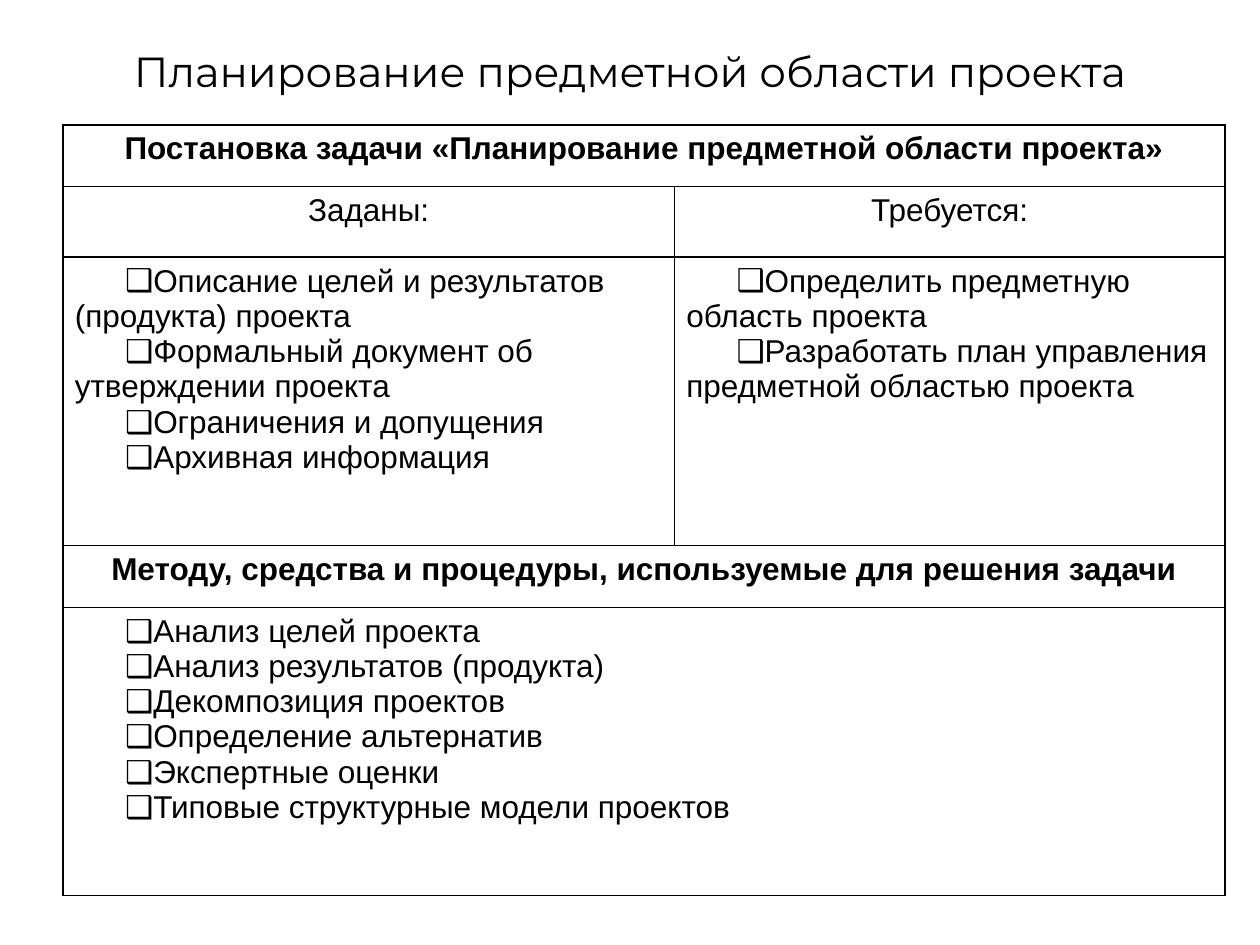
from dataclasses import dataclass

import pptx
import pptx.dml.color
import pptx.enum.text
import pptx.oxml.ns
import pptx.util
from lxml import etree

Pt = pptx.util.Pt
ALIGN = pptx.enum.text.PP_ALIGN
ANCHOR = pptx.enum.text.MSO_ANCHOR
BLACK = "000000"
COLUMNS = (349.4, 314.6)
ROWS = (35.2, 40.3, 164.9, 35.2, 164.6)


@dataclass
class CellText:
    row: int
    col: int
    lines: tuple[str, ...]
    heading: bool = False
    bullets: bool = False
    wide: bool = False


CELLS = (
    CellText(0, 0, ("Постановка задачи «Планирование предметной области проекта»",),
             heading=True, wide=True),
    CellText(1, 0, ("Заданы:",)),
    CellText(1, 1, ("Требуется:",)),
    CellText(2, 0, ("Описание целей и результатов (продукта) проекта",
                    "Формальный документ об утверждении проекта",
                    "Ограничения и допущения",
                    "Архивная информация"), bullets=True),
    CellText(2, 1, ("Определить предметную область проекта",
                    "Разработать план управления предметной областью проекта"),
             bullets=True),
    CellText(3, 0, ("Методу, средства и процедуры, используемые для решения задачи",),
             heading=True, wide=True),
    CellText(4, 0, ("Анализ целей проекта",
                    "Анализ результатов (продукта)",
                    "Декомпозиция проектов",
                    "Определение альтернатив",
                    "Экспертные оценки",
                    "Типовые структурные модели проектов"), bullets=True, wide=True),
)


def rgb(color: str) -> pptx.dml.color.RGBColor:
    return pptx.dml.color.RGBColor.from_string(color)


def add_xml(parent, tag: str, **attrs: str):
    return etree.SubElement(parent, pptx.oxml.ns.qn(tag), attrs)


def set_font(p, name: str, size: float, bold: bool = False) -> None:
    p.font.name, p.font.size, p.font.bold = name, Pt(size), bold
    p.font.color.rgb = rgb(BLACK)


def set_bullet(p) -> None:
    props = p._p.get_or_add_pPr()
    props.set("marL", "0")
    props.set("indent", str(Pt(28.8)))
    # Bullet font and character come before the default run properties
    props.insert(0, etree.Element(pptx.oxml.ns.qn("a:buFont"), typeface="Arial"))
    props.insert(1, etree.Element(pptx.oxml.ns.qn("a:buChar"), char="❑"))


def set_borders(cell, color: str, width: float) -> None:
    props = cell._tc.get_or_add_tcPr()
    for side in ("a:lnL", "a:lnR", "a:lnT", "a:lnB"):
        line = add_xml(props, side, w=str(Pt(width)))
        add_xml(add_xml(line, "a:solidFill"), "a:srgbClr", val=color)


def fill_cell(table, item: CellText) -> None:
    cell = table.cell(item.row, item.col)
    if item.wide:
        cell.merge(table.cell(item.row, len(COLUMNS) - 1))
    tf = cell.text_frame
    tf.text = "\n".join(item.lines)
    for p in tf.paragraphs:
        set_font(p, "Arial", 18, item.heading)
        p.alignment = ALIGN.LEFT if item.bullets else ALIGN.CENTER
        if item.bullets:
            set_bullet(p)


def main() -> None:
    prs = pptx.Presentation()
    prs.slide_width, prs.slide_height = Pt(720), Pt(540)
    s = prs.slides.add_slide(prs.slide_layouts[5])

    # Title
    title = s.shapes.title
    title.left, title.top, title.width, title.height = Pt(36), Pt(9), Pt(648), Pt(62.6)
    tf = title.text_frame
    tf.text = "Планирование предметной области проекта"
    tf.vertical_anchor = ANCHOR.MIDDLE
    p = tf.paragraphs[0]
    p.alignment = ALIGN.CENTER
    set_font(p, "Montserrat", 24)

    # Table grid
    table = s.shapes.add_table(len(ROWS), len(COLUMNS), Pt(36), Pt(71.5),
                               Pt(sum(COLUMNS)), Pt(sum(ROWS))).table
    table.first_row = table.horz_banding = False
    for column, width in zip(table.columns, COLUMNS):
        column.width = Pt(width)
    for row, height in zip(table.rows, ROWS):
        row.height = Pt(height)
    for cell in table.iter_cells():
        cell.margin_left = cell.margin_right = Pt(6.75)
        cell.margin_top = cell.margin_bottom = Pt(3.6)
        set_borders(cell, BLACK, 1)
        cell.fill.background()

    # Table text
    for item in CELLS:
        fill_cell(table, item)

    prs.save("out.pptx")


if __name__ == "__main__":
    main()
